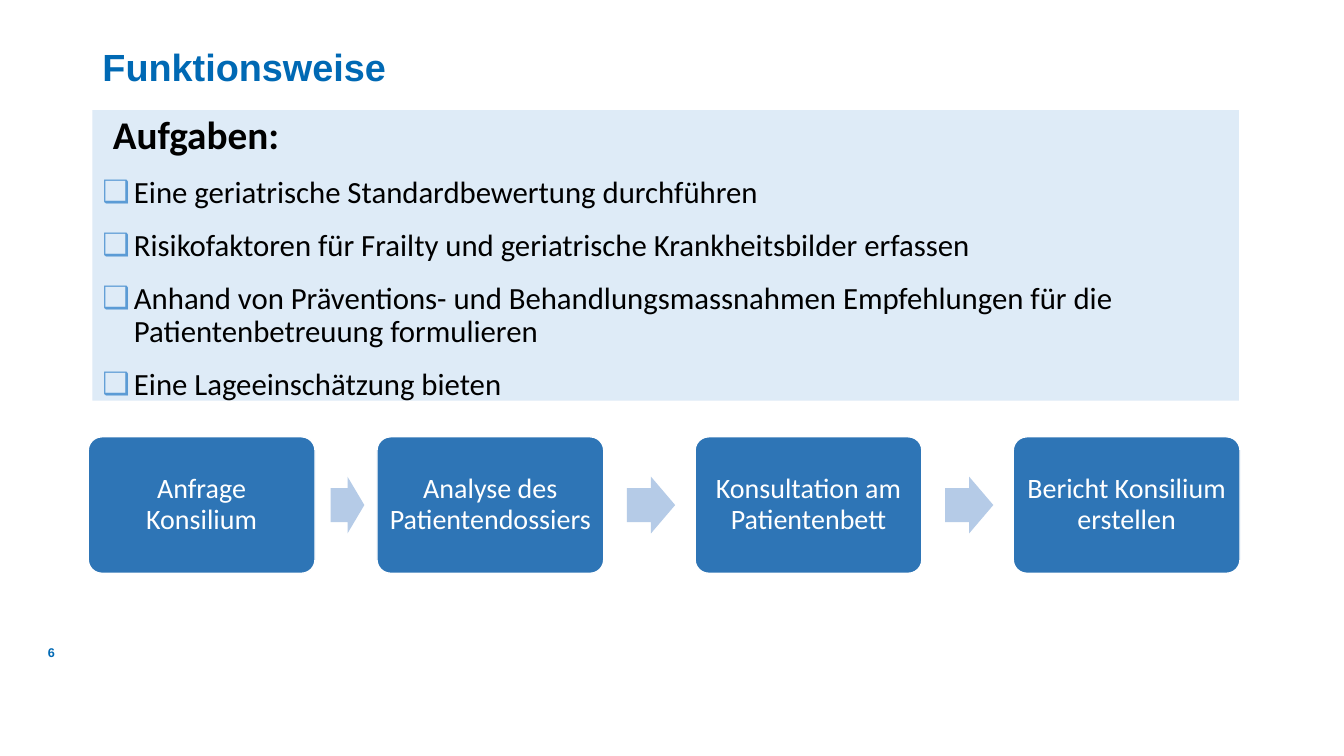
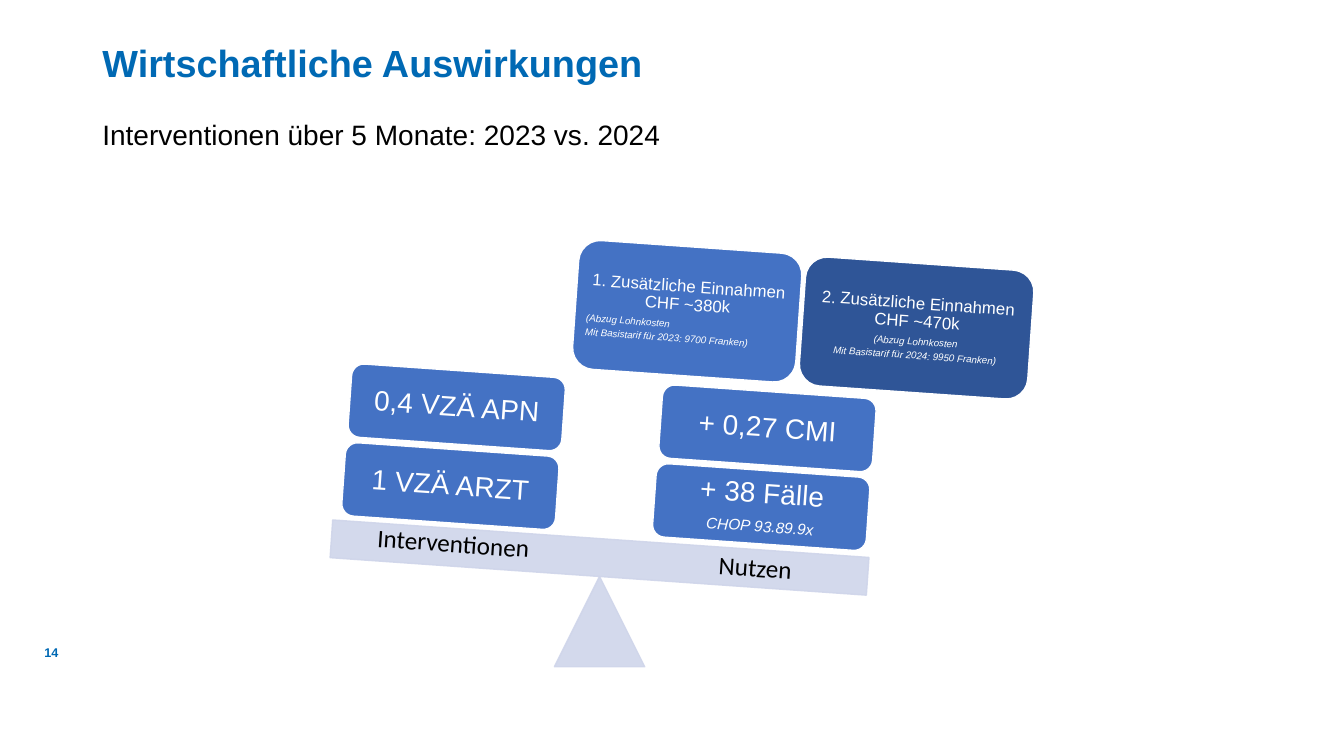
from lxml.etree import SubElement
from pptx import Presentation
from pptx.dml.color import RGBColor
from pptx.enum.shapes import MSO_SHAPE
from pptx.enum.text import MSO_ANCHOR, MSO_AUTO_SIZE, PP_ALIGN
from pptx.oxml.ns import qn
from pptx.util import Pt

PX = 9525  # 96 px to the inch
HUES = {
    "title": "0069B4", "text": "000000", "white": "FFFFFF",
    "panel": "DEEBF7", "tick": "5B9BD5", "step": "2E75B6",
    "arrow": "B5CBE7", "block": "4472C4", "dark": "2F5597", "scale": "CFD5EA",
}
LEFT, MID = PP_ALIGN.LEFT, PP_ALIGN.CENTER
TILT = 4


def place(shape, box):
    for key, val in zip(("left", "top", "width", "height"), box):
        setattr(shape, key, val * PX)


def write(frame, rows, hue, frame_look, row_look, font_look):
    """Fill a frame; each row is its text, its size and its own font values."""
    for key, val in frame_look.items():
        setattr(frame, key, val)
    for i, (text, size, extra) in enumerate(rows):
        row = frame.paragraphs[0] if i == 0 else frame.add_paragraph()
        for key, val in row_look.items():
            setattr(row, key, val)
        run = row.add_run()
        run.text = text
        run.font.color.rgb = RGBColor.from_string(HUES[hue])
        for key, val in {**font_look, "size": Pt(size), **extra}.items():
            setattr(run.font, key, val)


deck = Presentation()
deck.slide_width, deck.slide_height = 1280 * PX, 720 * PX
tasks = deck.slides.add_slide(deck.slide_layouts[1])
costs = deck.slides.add_slide(deck.slide_layouts[5])

TOP = {"word_wrap": True, "auto_size": MSO_AUTO_SIZE.NONE,
       "vertical_anchor": MSO_ANCHOR.TOP}
CENTRE = {**TOP, "vertical_anchor": MSO_ANCHOR.MIDDLE}
GROW = {**TOP, "auto_size": MSO_AUTO_SIZE.SHAPE_TO_FIT_TEXT}
TIGHT = {"line_spacing": 0.9}
ARIAL, CALIBRI = {"name": "Arial"}, {"name": "Calibri"}
BOLD = {**ARIAL, "bold": True}

# Titles and slide numbers
for slide, title, y, number in (
    (tasks, "Funktionsweise", 42, "6"),
    (costs, "Wirtschaftliche Auswirkungen", 38, "14"),
):
    place(slide.shapes.title, (88, y, 1104, 50))
    write(slide.shapes.title.text_frame, [(title, 27, {})], "title", TOP,
          {**TIGHT, "alignment": LEFT}, BOLD)
    mark = slide.shapes.add_textbox(0, 0, 0, 0)
    place(mark, (0, 607, 98, 29))
    write(mark.text_frame, [(number, 9, {})], "title", CENTRE,
          {"alignment": MID}, BOLD)

# Task list
panel = tasks.placeholders[1]
place(panel, (88, 105, 1092, 286))
panel.fill.solid()
panel.fill.fore_color.rgb = RGBColor.from_string(HUES["panel"])
items = [
    "Eine geriatrische Standardbewertung durchführen",
    "Risikofaktoren für Frailty und geriatrische Krankheitsbilder erfassen",
    "Anhand von Präventions- und Behandlungsmassnahmen Empfehlungen für die "
    "Patientenbetreuung formulieren",
    "Eine Lageeinschätzung bieten",
]
write(panel.text_frame,
      [("Aufgaben:", 28, {"bold": True})] + [(item, 22, {}) for item in items],
      "text", GROW,
      {**TIGHT, "space_before": Pt(12), "space_after": Pt(2)}, CALIBRI)
head, *rest = panel.text_frame.paragraphs
head.space_before = Pt(0)
props = head._p.get_or_add_pPr()
props.set("marL", str(10 * PX))
props.set("indent", "0")
SubElement(props, qn("a:buNone"))
for row in rest:
    props = row._p.get_or_add_pPr()
    props.set("marL", str(30 * PX))
    props.set("indent", str(-30 * PX))
    tint = SubElement(props, qn("a:buClr"))
    SubElement(tint, qn("a:srgbClr"), val=HUES["tick"])
    SubElement(props, qn("a:buChar"), char="❑")

# Process steps: slide, kind, box, angle, fill, line, inset, rows
ROUND, ARROW = MSO_SHAPE.ROUNDED_RECTANGLE, MSO_SHAPE.RIGHT_ARROW
parts = []
steps = ["Anfrage Konsilium", "Analyse des Patientendossiers",
         "Konsultation am Patientenbett", "Bericht Konsilium erstellen"]
for i, step in enumerate(steps):
    x = 359 + 303 * (i - 1) if i else 84
    parts.append((tasks, ROUND, (x, 416, 216, 130), 0, "step", "white", 8,
                  [(step, 20, {})]))
for x, wide in ((315, 32), (597, 46), (900, 46)):
    parts.append((tasks, ARROW, (x, 454, wide, 54), 0, "arrow", None, 0, []))

# Scale with its beam
parts += [
    (costs, MSO_SHAPE.ISOSCELES_TRIANGLE, (528, 549, 86, 86), 0,
     "scale", "scale", 0, []),
    (costs, MSO_SHAPE.RECTANGLE, (315, 513, 512, 36), TILT,
     "scale", "scale", 0, []),
]

# Blocks stacked on both arms, from the beam upwards
SMALL = {"italic": True}
stacks = [
    (623, 448, [[("+ 38 Fälle", 20, {}), ("CHOP 93.89.9x", 11, SMALL)],
                [("+ 0,27 CMI", 20, {})]]),
    (327, 428, [[("1 VZÄ ARZT", 20, {})], [("0,4 VZÄ APN", 20, {})]]),
]
for x, y, blocks in stacks:
    for i, rows in enumerate(blocks):
        parts.append((costs, ROUND, (x + 6 * i, y - 75 * i, 204, 70), TILT,
                      "block", "white", 8, rows))

# Income cards
for box, fill, gain, base in (
    ((548, 235, 213, 123), "block", "1. Zusätzliche Einnahmen CHF ~380k",
     "Mit Basistarif für 2023: 9700 Franken)"),
    ((764, 251, 218, 123), "dark", "2. Zusätzliche Einnahmen CHF ~470k",
     "Mit Basistarif für 2024: 9950 Franken)"),
):
    parts.append((costs, ROUND, box, TILT, fill, "white", 5,
                  [(gain, 12, {}), ("(Abzug Lohnkosten", 7, SMALL),
                   (base, 7, SMALL)]))

# Draw the shapes
for slide, kind, box, angle, fill, line, inset, rows in parts:
    shape = slide.shapes.add_shape(kind, 0, 0, 0, 0)
    place(shape, box)
    shape.rotation = angle
    shape.shadow.inherit = False
    shape.fill.solid()
    shape.fill.fore_color.rgb = RGBColor.from_string(HUES[fill])
    if line:
        shape.line.color.rgb = RGBColor.from_string(HUES[line])
        shape.line.width = Pt(1)
    else:
        shape.line.fill.background()
    if kind == ARROW:
        shape.adjustments[0] = 0.6
    if fill == "step":
        shape.adjustments[0] = 0.1
    if fill == "scale":
        for tint in shape._element.spPr.iter(qn("a:srgbClr")):
            SubElement(tint, qn("a:alpha"), val="90000")
    if rows:
        sides = ("left", "top", "right", "bottom")
        edge = {f"margin_{side}": inset * PX for side in sides}
        font = CALIBRI if slide is tasks else ARIAL
        write(shape.text_frame, rows, "white", {**CENTRE, **edge},
              {**TIGHT, "alignment": MID}, font)
        for row, (_, size, _) in zip(shape.text_frame.paragraphs, rows[:-1]):
            row.space_after = Pt(round(size * 0.35, 1))
        if fill == "block" and len(rows) == 3:
            for row in shape.text_frame.paragraphs[1:]:
                row.alignment = LEFT

# Subtitle and beam labels
for text, size, box, angle, frame, row, font in (
    ("Interventionen über 5 Monate: 2023 vs. 2024", 20, (88, 60, 612, 139), 0,
     CENTRE, TIGHT, ARIAL),
    ("Interventionen", 18, (350, 498, 178, 38), TILT, GROW, {}, CALIBRI),
    ("Nutzen", 18, (675, 524, 178, 38), TILT, GROW, {}, CALIBRI),
):
    label = costs.shapes.add_textbox(0, 0, 0, 0)
    place(label, box)
    label.rotation = angle
    write(label.text_frame, [(text, size, {})], "text", frame, row, font)

deck.save("out.pptx")
